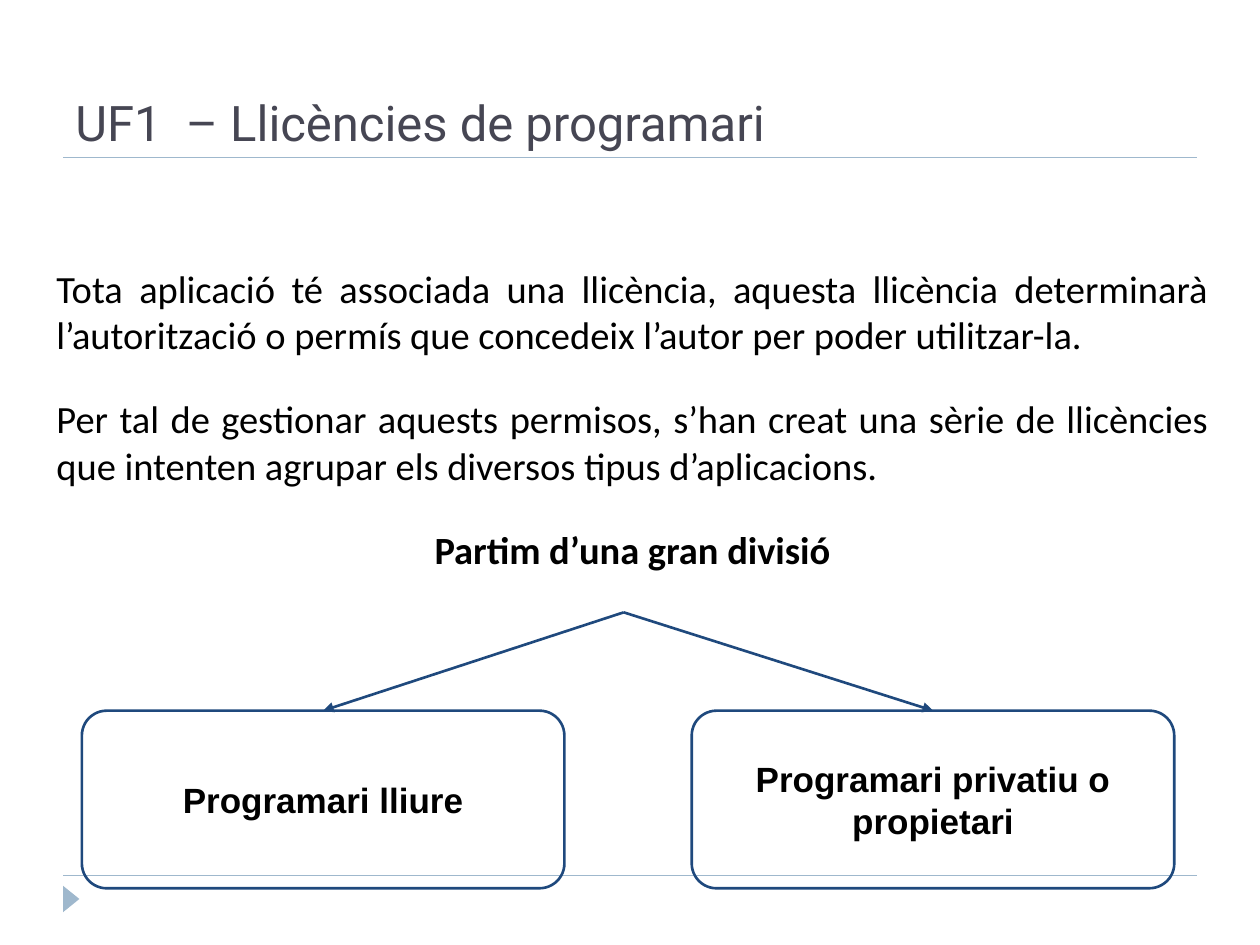
"""Build a slide on software licences and their two main families."""
from dataclasses import dataclass

from lxml import etree
from pptx import Presentation
from pptx.dml.color import RGBColor
from pptx.enum.shapes import MSO_CONNECTOR, MSO_SHAPE
from pptx.enum.text import MSO_ANCHOR, PP_ALIGN
from pptx.oxml.ns import qn
from pptx.util import Inches, Pt

STRAIGHT = MSO_CONNECTOR.STRAIGHT
ROUNDED, TRIANGLE = MSO_SHAPE.ROUNDED_RECTANGLE, MSO_SHAPE.ISOSCELES_TRIANGLE
LEFT, CENTER, JUSTIFY = PP_ALIGN.LEFT, PP_ALIGN.CENTER, PP_ALIGN.JUSTIFY
TOP, MIDDLE, BOTTOM = MSO_ANCHOR.TOP, MSO_ANCHOR.MIDDLE, MSO_ANCHOR.BOTTOM

TITLE = "UF1  – Llicències de programari"
BODY = [
    ("Tota aplicació té associada una llicència, aquesta llicència determinarà "
     "l’autorització o permís que concedeix l’autor per poder utilitzar-la.", JUSTIFY, False),
    ("Per tal de gestionar aquests permisos, s’han creat una sèrie de llicències "
     "que intenten agrupar els diversos tipus d’aplicacions.", JUSTIFY, False),
    ("Partim d’una gran divisió", CENTER, True),
]
FAMILIES = ["Programari lliure", "Programari privatiu o propietari"]

SLIDE_W, SLIDE_H = 10, 7.5
MARGIN = 0.5
RULES_Y = [6.95, 1.25]
BOX_X, BOX_Y, BOX_W, BOX_H, BOX_STEP = 0.65, 5.64, 3.83, 1.41, 4.84
APEX = (4.95, 4.86)


@dataclass(frozen=True)
class Theme:
    rule: RGBColor = RGBColor(0x9F, 0xB8, 0xCD)
    outline: RGBColor = RGBColor(0x1F, 0x49, 0x7D)
    title: RGBColor = RGBColor(0x46, 0x46, 0x53)
    text: RGBColor = RGBColor(0, 0, 0)
    title_font: str = "Roboto"
    body_font: str = "Calibri"
    box_font: str = "Arial"
    title_size: int = 28
    body_size: int = 22
    box_size: int = 20
    gap: int = 22
    rule_width: float = 0.75
    outline_width: float = 1.5


T = Theme()


def add_line(s, start, end, color, width, arrow=False):
    line = s.shapes.add_connector(STRAIGHT, *map(Inches, start + end))
    line.line.color.rgb = color
    line.line.width = Pt(width)
    if arrow:
        etree.SubElement(line.line._get_or_add_ln(), qn("a:tailEnd"), type="triangle")
    etree.SubElement(line._element.spPr, qn("a:effectLst"))


def write(sp, items, font, size, color, anchor, inset_y=0.1):
    tf = sp.text_frame
    tf.word_wrap = True
    tf.vertical_anchor = anchor
    tf.margin_left = tf.margin_right = Inches(0.1)
    tf.margin_top = tf.margin_bottom = Inches(inset_y)
    for i, (text, align, bold) in enumerate(items):
        p = tf.add_paragraph() if i else tf.paragraphs[0]
        p.text = text
        p.alignment = align
        p.space_before = Pt(T.gap if i else 0)
        p.font.name, p.font.size, p.font.bold = font, Pt(size), bold
        p.font.color.rgb = color


def add_family(s, index, name):
    x = BOX_X + index * BOX_STEP
    sp = s.shapes.add_shape(ROUNDED, *map(Inches, (x, BOX_Y, BOX_W, BOX_H)))
    sp.adjustments[0] = 0.14
    sp.shadow.inherit = False
    sp.fill.background()
    sp.line.color.rgb = T.outline
    sp.line.width = Pt(T.outline_width)
    write(sp, [(name, CENTER, True)], T.box_font, T.box_size, T.text, MIDDLE)
    add_line(s, APEX, (x + BOX_W / 2, BOX_Y), T.outline, T.outline_width, arrow=True)


def main():
    prs = Presentation()
    prs.slide_width, prs.slide_height = Inches(SLIDE_W), Inches(SLIDE_H)
    s = prs.slides.add_slide(prs.slide_layouts[6])

    for y in RULES_Y:
        add_line(s, (MARGIN, y), (SLIDE_W - MARGIN, y), T.rule, T.rule_width)
    marker = s.shapes.add_shape(TRIANGLE, *map(Inches, (0.46, 7.07, 0.21, 0.13)))
    marker.rotation = 90
    marker.shadow.inherit = False
    marker.fill.solid()
    marker.fill.fore_color.rgb = T.rule
    marker.line.fill.background()

    title = s.shapes.add_textbox(*map(Inches, (MARGIN, 0.22, 8.72, 1.03)))
    write(title, [(TITLE, LEFT, False)], T.title_font, T.title_size, T.title, BOTTOM, 0.05)
    body = s.shapes.add_textbox(*map(Inches, (0.35, 2, 9.34, 5.07)))
    write(body, BODY, T.body_font, T.body_size, T.text, TOP)

    for i, name in enumerate(FAMILIES):
        add_family(s, i, name)
    prs.save("out.pptx")


if __name__ == "__main__":
    main()
